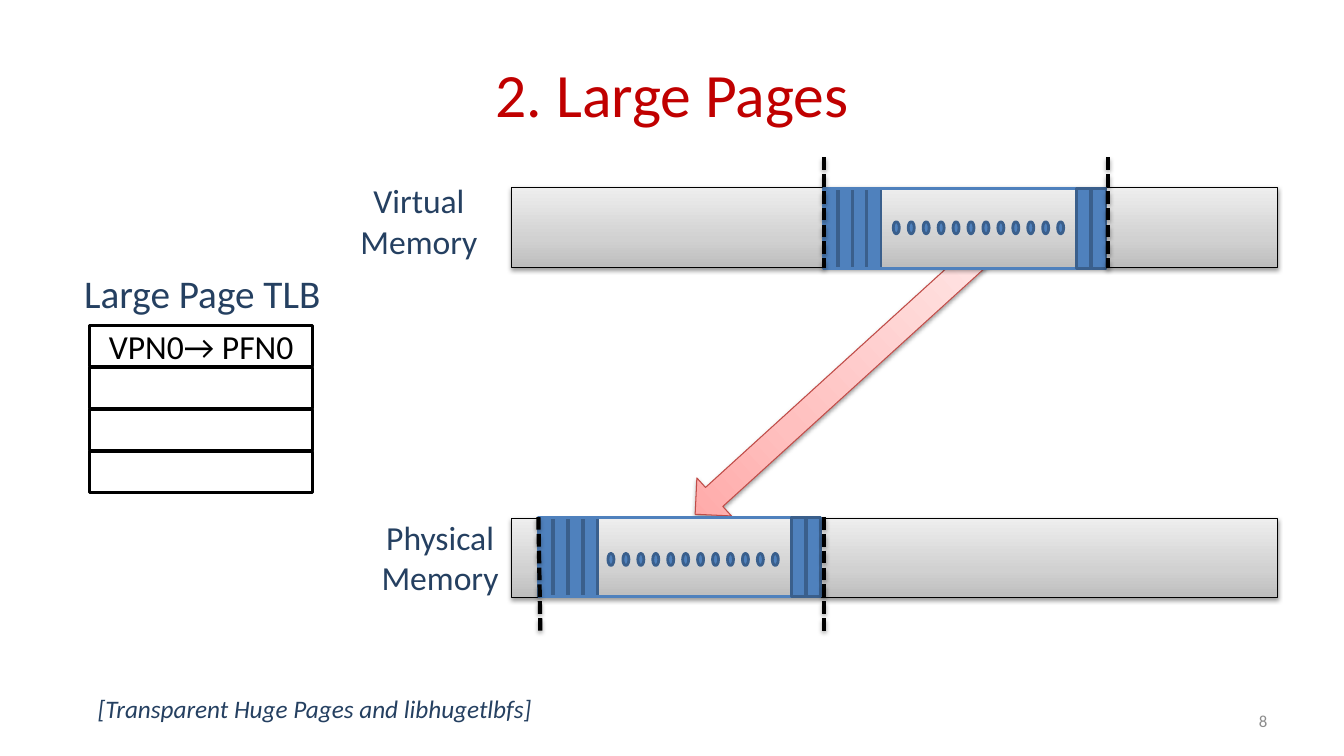
import copy
import dataclasses
import typing

import lxml.etree
import pptx
import pptx.dml.color
import pptx.enum.dml
import pptx.enum.shapes
import pptx.enum.text
import pptx.oxml.ns
import pptx.util

Inches = pptx.util.Inches
Pt = pptx.util.Pt
Kind = pptx.enum.shapes.MSO_SHAPE
Align = pptx.enum.text.PP_ALIGN
Anchor = pptx.enum.text.MSO_ANCHOR
Fit = pptx.enum.text.MSO_AUTO_SIZE
qn = pptx.oxml.ns.qn

Box = tuple[float, float, float, float]
Stops = list[tuple[float, str]]

NAVY, BLUE, EDGE = "254061", "4F81BD", "3A5F8C"
BLACK, WHITE = "000000", "FFFFFF"
GREY: Stops = [(0, "BDBDBD"), (0.35, "D1D1D1"), (1, "EEEEEE")]
PINK: Stops = [(0, "FFA6A5"), (0.35, "FFC0BF"), (1, "FFE7E7")]
CELL_W, BAR_H = 0.14, 0.79
PAGE_W = 2.8
DOTS, DOT_SPAN = 12, 1.63


@dataclasses.dataclass
class Label:
    text: str
    box: Box
    size: int
    color: str = NAVY
    align: Align = Align.CENTER
    anchor: Anchor = Anchor.TOP
    fit: Fit = Fit.SHAPE_TO_FIT_TEXT
    italic: bool = False


@dataclasses.dataclass
class Memory:
    """A memory bar holding one large page."""
    top: float
    left: float
    page: float
    step: float
    dot: float


@dataclasses.dataclass
class Mark:
    start: tuple[float, float]
    end: tuple[float, float]


MEMS = [
    Memory(top=1.86, left=8.17, page=1.87, step=0.143, dot=2.2),
    Memory(top=5.14, left=5.34, page=5.13, step=0.15, dot=5.49),
]
MARKS = [
    Mark((5.34, 5.13), (5.36, 6.29)),
    Mark((8.17, 5.13), (8.17, 6.29)),
    Mark((10.99, 1.56), (10.99, 2.66)),
    Mark((8.17, 1.56), (8.17, 2.66)),
]
LABELS = [
    Label("2. Large Pages", (0.67, 0.3, 12, 1.25), 44, "C00000",
          anchor=Anchor.MIDDLE, fit=Fit.NONE),
    Label("8", (9.56, 6.95, 3.11, 0.4), 12, "8C8C8C", Align.RIGHT,
          Anchor.MIDDLE, Fit.NONE),
    Label("Virtual Memory", (3.25, 1.74, 1.81, 0.91), 24),
    Label("Physical Memory", (3.46, 5.08, 1.81, 0.91), 24),
    Label("[Transparent Huge Pages and libhugetlbfs]",
          (0.87, 6.83, 4.64, 0.4), 18, align=Align.LEFT, italic=True),
    Label("Large Page TLB", (0.71, 2.62, 2.59, 0.57), 28),
]
ENTRY = Label("VPN0→ PFN0", (0.89, 3.23, 2.21, 0.41), 24, BLACK,
              anchor=Anchor.MIDDLE, fit=Fit.NONE)


def rgb(code: str) -> pptx.dml.color.RGBColor:
    return pptx.dml.color.RGBColor.from_string(code)


def apply(item: typing.Any, form: dict[str, typing.Any]) -> None:
    for name, value in form.items():
        setattr(item, name, value)


def blend(shape: typing.Any, stops: Stops) -> None:
    """Fill with a three-stop gradient that runs from bottom to top."""
    shape.fill.gradient()
    shape.fill.gradient_angle = 90
    group = shape.element.spPr.find(qn("a:gradFill")).find(qn("a:gsLst"))
    group.append(copy.deepcopy(group[0]))
    for stop, (place, code) in zip(shape.fill.gradient_stops, stops):
        stop.position = place
        stop.color.rgb = rgb(code)


def shade(item: typing.Any, alpha: int, dist: float) -> None:
    """Cast a soft shadow straight down."""
    props = item.element.spPr
    group = props.find(qn("a:effectLst"))
    if group is None:
        group = lxml.etree.SubElement(props, qn("a:effectLst"))
    cast = lxml.etree.SubElement(
        group, qn("a:outerShdw"), blurRad=str(Pt(3.1)), dist=str(Pt(dist)),
        dir="5400000", rotWithShape="0")
    tint = lxml.etree.SubElement(cast, qn("a:srgbClr"), val=BLACK)
    lxml.etree.SubElement(tint, qn("a:alpha"), val=str(alpha * 1000))


def draw(shapes: typing.Any, box: Box, fill: str | Stops | None, line: str,
         width: float = 2, kind: Kind = Kind.RECTANGLE) -> typing.Any:
    shape = shapes.add_shape(kind, *map(Inches, box))
    shape.shadow.inherit = False
    if fill is None:
        shape.fill.background()
    elif isinstance(fill, str):
        shape.fill.solid()
        shape.fill.fore_color.rgb = rgb(fill)
    else:
        blend(shape, fill)
        shade(shape, 38, 1.6)
    shape.line.color.rgb = rgb(line)
    shape.line.width = Pt(width)
    return shape


def write(shape: typing.Any, label: Label) -> None:
    frame = shape.text_frame
    frame.text = label.text
    apply(frame, {"word_wrap": True, "auto_size": label.fit,
                  "vertical_anchor": label.anchor})
    para = frame.paragraphs[0]
    para.alignment = label.align
    font = para.runs[0].font
    apply(font, {"name": "Calibri", "size": Pt(label.size),
                 "italic": label.italic})
    font.color.rgb = rgb(label.color)


def store(shapes: typing.Any, mem: Memory) -> None:
    """Draw a memory bar, its large page, the small pages and the dots."""
    draw(shapes, (5.07, mem.top, 7.6, BAR_H), GREY, BLACK, 0.75)
    for i in range(4):
        left = mem.left + i * mem.step
        draw(shapes, (left, mem.page, CELL_W, BAR_H), BLUE, EDGE)
    draw(shapes, (mem.left, mem.page, PAGE_W, BAR_H), None, BLUE)
    for i in range(2):
        left = mem.left + 2.51 + i * 0.15
        draw(shapes, (left, mem.page, CELL_W, BAR_H), BLUE, EDGE)
    group = shapes.add_group_shape().shapes
    for i in range(DOTS):
        left = mem.left + 0.69 + i * DOT_SPAN / (DOTS - 1)
        draw(group, (left, mem.dot, 0.06, 0.12), BLUE, EDGE,
             kind=Kind.FLOWCHART_CONNECTOR)


def dash(shapes: typing.Any, mark: Mark) -> None:
    ends = map(Inches, mark.start + mark.end)
    item = shapes.add_connector(pptx.enum.shapes.MSO_CONNECTOR.STRAIGHT, *ends)
    item.line.color.rgb = rgb(BLACK)
    apply(item.line, {"width": Pt(3),
                      "dash_style": pptx.enum.dml.MSO_LINE.SQUARE_DOT})
    shade(item, 35, 1.8)


def main() -> None:
    deck = pptx.Presentation()
    apply(deck, {"slide_width": Inches(13.33), "slide_height": Inches(7.5)})
    shapes = deck.slides.add_slide(deck.slide_layouts[6]).shapes

    arrow = draw(shapes, (8.06, 1.89, 0.51, 3.84), PINK, "BF4C48", 0.75,
                 Kind.DOWN_ARROW)
    arrow.rotation = 47.7
    for mem in MEMS:
        store(shapes, mem)
    for mark in MARKS:
        dash(shapes, mark)
    for label in LABELS:
        write(shapes.add_textbox(*map(Inches, label.box)), label)

    left, top, width, height = ENTRY.box
    rows = [draw(shapes, (left, top + i * 0.416, width, height), WHITE, BLACK)
            for i in range(4)]
    write(rows[0], ENTRY)
    deck.save("out.pptx")


if __name__ == "__main__":
    main()
